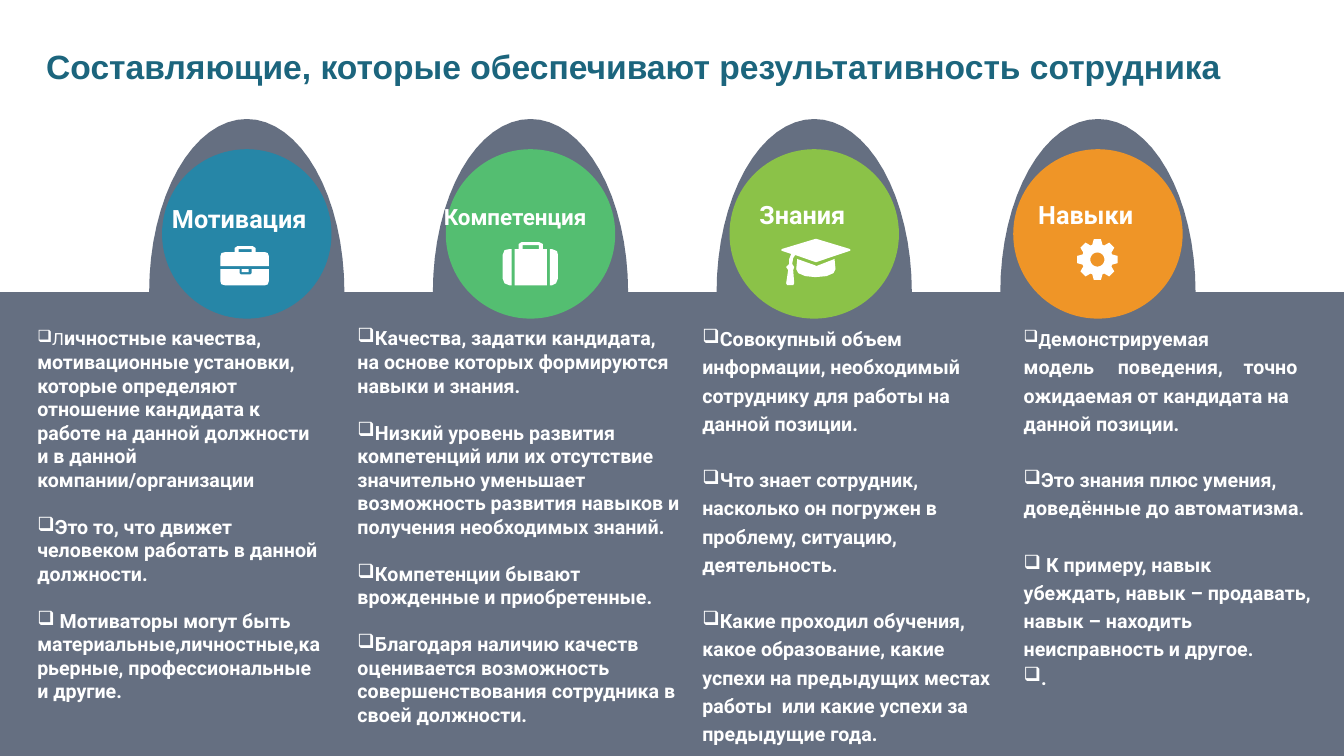
import math
from dataclasses import dataclass

from lxml import etree
from pptx import Presentation
from pptx import util as u
from pptx.dml.color import RGBColor
from pptx.enum import shapes, text
from pptx.oxml import ns


@dataclass(frozen=True)
class Theme:
    title: str = "1C657D"
    panel: str = "3F4C62"
    white: str = "FFFFFF"
    heading_font: str = "Arial"
    body_font: str = "Roboto"
    title_size: int = 24
    body_size: int = 14
    initial_size: int = 12


THEME = Theme()
WIDTH, HEIGHT = 33.87, 19.05
HORIZON = 7.36
FIRST_CENTER, STEP = 6.22, 7.15
DIAMETER = 4.27


def ring(radius, center, count=32):
    angles = [2 * math.pi * i / count for i in range(count)]
    return [(center + radius * math.cos(a), center + radius * math.sin(a)) for a in angles]


def gear(center=20.5, teeth=8):
    points = []
    for tooth in range(teeth):
        for radius, turn in ((15.5, -19), (20.5, -10), (20.5, 10), (15.5, 19)):
            angle = math.radians(tooth * 360 / teeth + turn)
            points.append((center + radius * math.cos(angle), center + radius * math.sin(angle)))
    return [points, ring(7, center)]


# Icon contours, in hundredths of an inch from the icon's top left corner
BRIEFCASE = [
    [(0, 20), (0, 10), (1, 7), (5, 6), (14, 6), (14, 2), (17, 0), (32, 0), (35, 2),
     (35, 6), (44, 6), (47, 7), (48, 10), (48, 20)],
    [(18, 6), (18, 3), (31, 3), (31, 6)],
    [(0, 23), (19, 23), (19, 27), (20, 28), (30, 28), (31, 27), (31, 23), (48, 23),
     (48, 35), (47, 38), (44, 39), (5, 39), (1, 38), (0, 35)],
    [(21, 23), (28, 23), (28, 26), (21, 26)],
]
SUITCASE = [
    [(9, 43), (7, 43), (2, 41), (0, 36), (0, 13), (2, 8), (7, 7), (9, 7)],
    [(12, 43), (12, 7), (16, 7), (16, 2), (19, 0), (36, 0), (40, 2), (40, 7), (44, 7), (44, 43)],
    [(20, 7), (20, 3), (36, 3), (36, 7)],
    [(47, 7), (49, 7), (54, 9), (55, 13), (55, 36), (53, 41), (49, 43), (47, 43)],
]
GRADUATION_CAP = [
    [(68, 12), (35, 23), (34, 23), (14, 16), (12, 19), (11, 25), (13, 28), (12, 31), (13, 44),
     (12, 46), (6, 46), (5, 44), (7, 31), (5, 28), (8, 25), (8, 20), (10, 15), (1, 12),
     (0, 11), (1, 10), (34, 0), (35, 0), (68, 10), (69, 11)],
    [(54, 30), (52, 34), (45, 37), (34, 38), (24, 37), (17, 34), (15, 30), (16, 20),
     (33, 26), (35, 27), (53, 20)],
]

# Medallions: label, size, colour, label offset and width, icon, icon offset
MEDALLIONS = [
    ("Мотивация", 18, "2686A7", (0, 1.24), 4.34, BRIEFCASE, (1.47, 2.44)),
    ("Компетенция", 16, "54BE71", (-0.3, 1.24), 5.36, SUITCASE, (1.43, 2.34)),
    ("Знания", 18, "8BC248", (0.5, 1.14), 3.78, GRADUATION_CAP, (1.3, 2.26)),
    ("Навыки", 18, "EF9527", (0.38, 1.14), 3.5, gear(), (1.6, 2.26)),
]

# Columns: box, line spacing, gap in points, first letter's weight (None if it is plain), items
COLUMNS = [
    ((0.69, 8.1, 7.67), 1.0, 16.8, False, [
        "Личностные качества, мотивационные установки, которые определяют отношение "
        "кандидата к работе на данной должности и в данной компании/организации",
        "Это то, что движет человеком работать в данной должности.",
        " Мотиваторы могут быть материальные,личностные,карьерные, "
        "профессиональные и другие."]),
    ((8.76, 8.1, 8.69), 1.0, 16.8, None, [
        "Качества, задатки кандидата, на основе которых формируются навыки и знания.",
        "Низкий уровень развития компетенций или их отсутствие значительно уменьшает "
        "возможность развития навыков и получения необходимых знаний.",
        "Компетенции бывают врожденные и приобретенные.",
        "Благодаря наличию качеств оценивается возможность совершенствования "
        "сотрудника в своей должности."]),
    ((17.45, 8.0, 7.9), 1.2, 20.1, None, [
        "Совокупный объем информации, необходимый сотруднику для работы на данной позиции.",
        "Что знает сотрудник, насколько он погружен в проблему, ситуацию, деятельность.",
        "Какие проходил обучения, какое образование, какие успехи на предыдущих местах "
        "работы  или какие успехи за предыдущие года."]),
    ((25.55, 8.0, 7.77), 1.2, 20.1, True, [
        "Демонстрируемая\nмодель\tповедения,\tточно ожидаемая от кандидата на данной позиции.",
        "Это знания плюс умения, доведённые до автоматизма.",
        " К примеру, навык убеждать, навык – продавать, навык – находить "
        "неисправность и другое.",
        "."]),
]
TAB_STOPS = (2.37, 5.54)


def paint(shape, color):
    shape.shadow.inherit = False
    shape.fill.solid()
    shape.fill.fore_color.rgb = RGBColor.from_string(color)
    shape.line.fill.background()


def set_font(font, name, size, color, bold=True):
    font.name, font.size, font.bold = name, u.Pt(size), bold
    font.color.rgb = RGBColor.from_string(color)


def draw_outline(page, contours, left, top, unit, color):
    placed = [[(u.Cm(left + x * unit), u.Cm(top + y * unit)) for x, y in contour]
              for contour in contours]
    builder = page.shapes.build_freeform(*placed[0][0])
    builder.add_line_segments(placed[0][1:])
    for contour in placed[1:]:
        builder.move_to(*contour[0])
        builder.add_line_segments(contour[1:])
    shape = builder.convert_to_shape()
    paint(shape, color)
    return shape


def add_text_box(page, left, top, width, height):
    box = page.shapes.add_textbox(u.Cm(left), u.Cm(top), u.Cm(width), u.Cm(height))
    box.text_frame.word_wrap = True
    return box.text_frame


def add_panel(page, top, radius_x=2.46, radius_y=4.36, steps=32):
    points = [(0, HEIGHT), (0, top)]
    for index in range(len(MEDALLIONS)):
        center = FIRST_CENTER + index * STEP
        for step in range(steps + 1):
            angle = math.pi * (1 - step / steps)
            points.append((center + radius_x * math.cos(angle), top - radius_y * math.sin(angle)))
    points += [(WIDTH, top), (WIDTH, HEIGHT)]
    panel = draw_outline(page, [points], 0, 0, 1, THEME.panel)
    color = panel.fill._xPr.find(".//" + ns.qn("a:srgbClr"))
    etree.SubElement(color, ns.qn("a:alpha"), val="80000")


def add_medallion(page, left, top, label, size, color, offset, width, icon, icon_offset):
    disc = page.shapes.add_shape(shapes.MSO_SHAPE.OVAL, u.Cm(left), u.Cm(top),
                                 u.Cm(DIAMETER), u.Cm(DIAMETER))
    paint(disc, color)
    draw_outline(page, icon, left + icon_offset[0], top + icon_offset[1], 0.0254, THEME.white)
    para = add_text_box(page, left + offset[0], top + offset[1], width, 1.02).paragraphs[0]
    para.text = label
    set_font(para.font, THEME.body_font, size, THEME.white)


def add_bullet(para):
    properties = para._p.get_or_add_pPr()
    properties.set("marL", "0")
    properties.set("indent", "0")
    bullet = etree.Element(ns.qn("a:buChar"), char="❑")
    tabs = etree.Element(ns.qn("a:tabLst"))
    for stop in TAB_STOPS:
        etree.SubElement(tabs, ns.qn("a:tab"), pos=str(u.Cm(stop)), algn="l")
    defaults = properties.find(ns.qn("a:defRPr"))
    defaults.addprevious(bullet)
    defaults.addprevious(tabs)


def add_column(page, box, spacing, gap, initial_bold, items):
    left, top, width = box
    frame = add_text_box(page, left, top, width, HEIGHT - top)
    for index, item in enumerate(items):
        para = frame.paragraphs[0] if index == 0 else frame.add_paragraph()
        para.line_spacing = spacing
        para.space_before = u.Pt(gap if index and item != "." else 0)
        set_font(para.font, THEME.body_font, THEME.body_size, THEME.white)
        add_bullet(para)
        if index == 0 and initial_bold is not None:
            span = para.add_run()
            span.text, item = item[0], item[1:]
            span.font.size, span.font.bold = u.Pt(THEME.initial_size), initial_bold
        for number, line in enumerate(item.split("\n")):
            if number:
                para.add_line_break()
            para.add_run().text = line


def add_title(page, left, top, width, height):
    title = page.shapes.title
    title.left, title.top, title.width, title.height = map(u.Cm, (left, top, width, height))
    frame = title.text_frame
    frame.text = "Составляющие, которые обеспечивают результативность сотрудника"
    frame.auto_size = text.MSO_AUTO_SIZE.NONE
    frame.vertical_anchor = text.MSO_ANCHOR.MIDDLE
    para = frame.paragraphs[0]
    para.alignment = text.PP_ALIGN.LEFT
    set_font(para.font, THEME.heading_font, THEME.title_size, THEME.title)


def main():
    deck = Presentation()
    deck.slide_width, deck.slide_height = u.Cm(WIDTH), u.Cm(HEIGHT)
    page = deck.slides.add_slide(deck.slide_layouts[5])
    add_title(page, 0.91, 1.02, 32.41, 1.27)
    add_panel(page, HORIZON)
    for column in COLUMNS:
        add_column(page, *column)
    for index, medallion in enumerate(MEDALLIONS):
        left = FIRST_CENTER + index * STEP - DIAMETER / 2
        add_medallion(page, left, 3.76, *medallion)
    deck.save("out.pptx")


if __name__ == "__main__":
    main()
